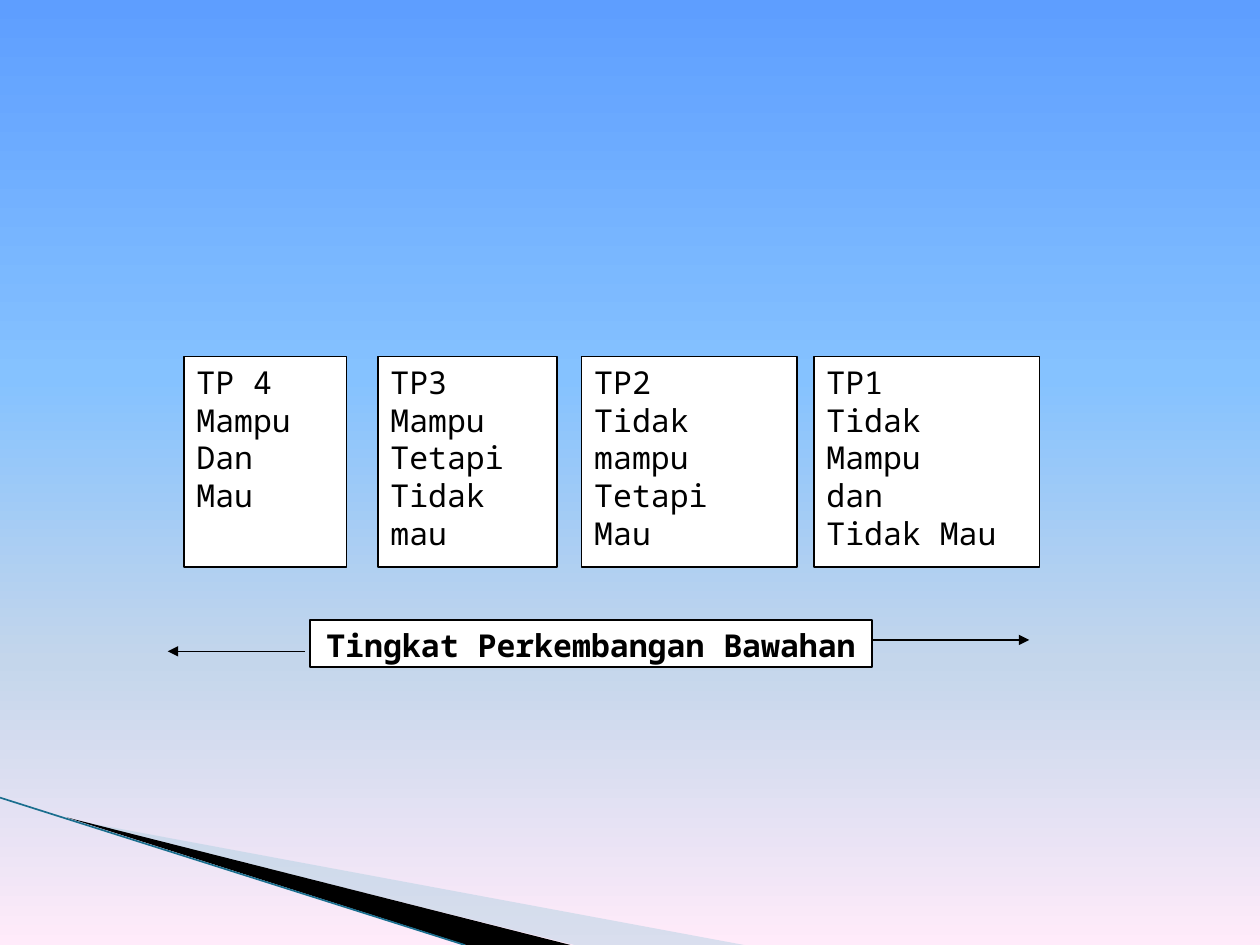
from copy import deepcopy

from lxml.etree import SubElement
from pptx import Presentation
from pptx.dml.color import RGBColor
from pptx.enum.shapes import MSO_CONNECTOR, MSO_SHAPE
from pptx.enum.text import MSO_ANCHOR, PP_ALIGN
from pptx.oxml.ns import qn
from pptx.util import Cm, Pt

FONT = "Noto Sans Mono"
BLACK, WHITE = "000000", "FFFFFF"
SKY = [(0, "5E9EFF"), (40, "85C2FF"), (70, "C4D6EB"), (100, "FFEBFA")]
BOX_TOP, BOX_HEIGHT = 7.19, 4.24
LEVELS = [
    (3.71, 3.28, ["TP 4", "Mampu", "Dan", "Mau"]),
    (7.62, 3.61, ["TP3", "Mampu", "Tetapi", "Tidak mau"]),
    (11.73, 4.34, ["TP2", "Tidak mampu", "Tetapi", "Mau"]),
    (16.41, 4.55, ["TP1", "Tidak Mampu", "dan", "Tidak Mau"]),
]


def rgb(value):
    return RGBColor.from_string(value)


class Deck:
    """Holds the style and the current slide; lengths are in centimetres."""

    def __init__(self, width, height):
        self.prs = Presentation()
        self.prs.slide_width, self.prs.slide_height = Cm(width), Cm(height)
        self.s = self.prs.slides.add_slide(self.prs.slide_layouts[6])

    def background(self, stops):
        """Fill the slide with a gradient from top to bottom."""
        fill = self.s.background.fill
        fill.gradient()
        fill.gradient_angle = 270
        gs_list = self.s.element.xpath(".//p:bg//a:gsLst")[0]
        for gs in list(gs_list):
            gs_list.remove(gs)
        for position, color in stops:
            gs = SubElement(gs_list, qn("a:gs"), pos=str(position * 1000))
            SubElement(gs, qn("a:srgbClr"), val=color)

    def polygon(self, points, color, opacity=100):
        (x, y), *rest = [(Cm(px), Cm(py)) for px, py in points]
        builder = self.s.shapes.build_freeform(x, y)
        builder.add_line_segments(rest)
        sp = builder.convert_to_shape()
        sp.shadow.inherit = False
        sp.fill.solid()
        sp.fill.fore_color.rgb = rgb(color)
        sp.line.fill.background()
        if opacity < 100:
            clr = sp.element.spPr.find(qn("a:solidFill"))[0]
            SubElement(clr, qn("a:alpha"), val=str(opacity * 1000))

    def box(self, x, y, w, h, lines, bold=False, align=PP_ALIGN.LEFT):
        sp = self.s.shapes.add_shape(
            MSO_SHAPE.RECTANGLE, Cm(x), Cm(y), Cm(w), Cm(h))
        sp.shadow.inherit = False
        sp.fill.solid()
        sp.fill.fore_color.rgb = rgb(WHITE)
        sp.line.color.rgb = rgb(BLACK)
        sp.line.width = Pt(0.75)
        tf = sp.text_frame
        tf.word_wrap = True
        tf.vertical_anchor = MSO_ANCHOR.TOP
        tf.text = "\n".join(lines)
        for p in tf.paragraphs:
            p.alignment = align
            for r in p.runs:
                r.font.name, r.font.size, r.font.bold = FONT, Pt(18), bold
                r.font.color.rgb = rgb(BLACK)

    def line(self, start, end, color=BLACK, width=0.75, arrow=False):
        ends = [Cm(v) for v in (*start, *end)]
        cxn = self.s.shapes.add_connector(MSO_CONNECTOR.STRAIGHT, *ends)
        cxn.line.color.rgb = rgb(color)
        cxn.line.width = Pt(width)
        if arrow:
            SubElement(cxn.line._get_or_add_ln(), qn("a:tailEnd"),
                       type="triangle")
        SubElement(cxn.element.spPr, qn("a:effectLst"))


def main():
    deck = Deck(25.4, 19.05)
    deck.background(SKY)
    deck.polygon([(1.4, 16.52), (15, 19.05), (11.58, 19.05)], "A0CBDC", 40)
    deck.polygon([(1.35, 16.48), (11.5, 19.05), (9.4, 19.05)], BLACK)
    deck.line((0, 16.08), (9.37, 19.05), "1A6E8E", 0.95)
    for x, w, lines in LEVELS:
        deck.box(x, BOX_TOP, w, BOX_HEIGHT, lines)
    deck.box(6.25, 12.5, 11.33, 0.95, ["Tingkat Perkembangan Bawahan"],
             bold=True, align=PP_ALIGN.CENTER)
    deck.line((17.58, 12.9), (20.75, 12.9), arrow=True)
    deck.line((6.15, 13.13), (3.38, 13.13), arrow=True)
    deck.prs.save("out.pptx")


if __name__ == "__main__":
    main()
